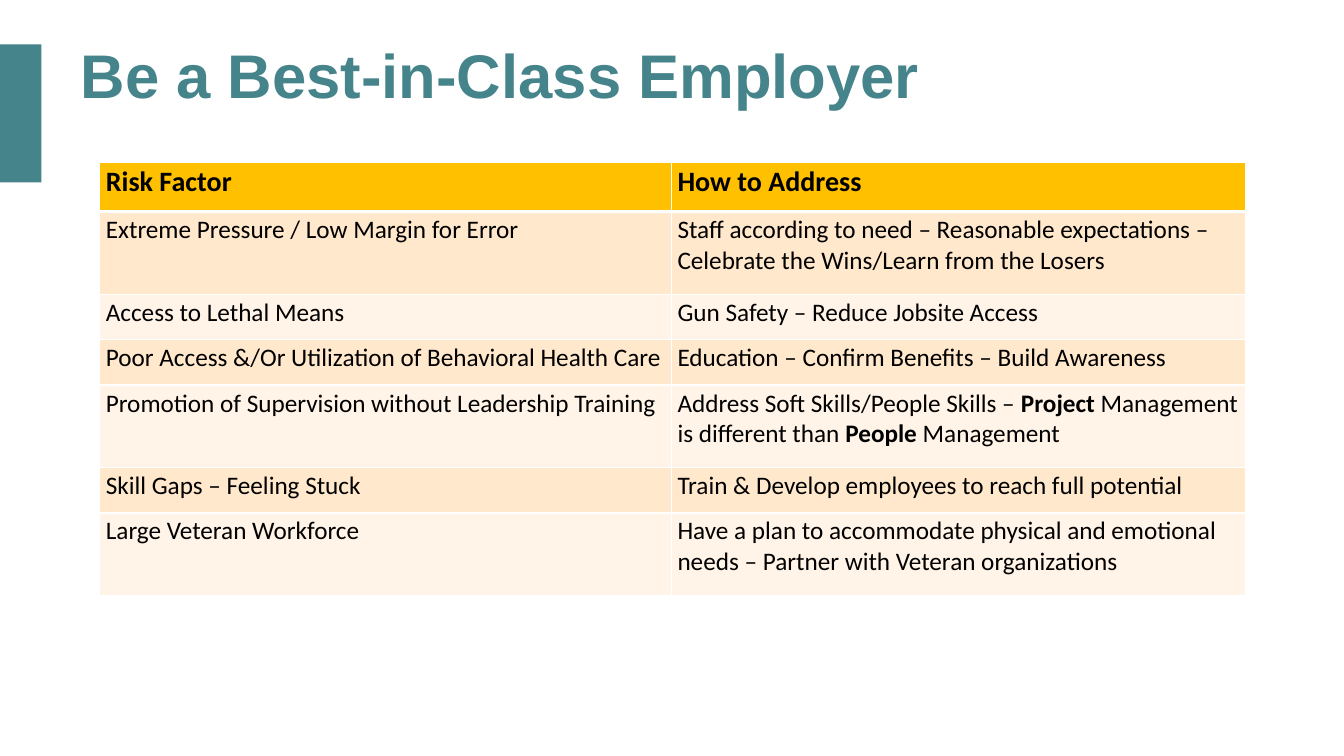
"""Build the slide on risk factors and how a best-in-class employer addresses them."""
import lxml.etree
import pptx
import pptx.dml.color
import pptx.enum.shapes
import pptx.enum.text
import pptx.oxml.ns
import pptx.util

COLORS = {
    "teal": "45848A",
    "gold": "FFC000",
    "peach": "FFE8CC",
    "cream": "FFF4E7",
    "text": "000000",
    "border": "FFFFFF",
}
RISKS = [
    ("Risk Factor", "How to Address"),
    ("Extreme Pressure / Low Margin for Error",
     "Staff according to need – Reasonable expectations – "
     "Celebrate the Wins/Learn from the Losers"),
    ("Access to Lethal Means", "Gun Safety – Reduce Jobsite Access"),
    ("Poor Access &/Or Utilization of Behavioral Health Care",
     "Education – Confirm Benefits – Build Awareness"),
    ("Promotion of Supervision without Leadership Training",
     "Address Soft Skills/People Skills – *Project* Management is different "
     "than *People* Management"),
    ("Skill Gaps – Feeling Stuck", "Train & Develop employees to reach full potential"),
    ("Large Veteran Workforce",
     "Have a plan to accommodate physical and emotional needs – "
     "Partner with Veteran organizations"),
]
HEADER_HEIGHT, ONE_LINE, TWO_LINES = 0.49, 0.45, 0.82
ROW_HEIGHTS = [HEADER_HEIGHT, TWO_LINES, ONE_LINE, ONE_LINE, TWO_LINES, ONE_LINE, TWO_LINES]
COLUMN_WIDTHS = [5.67, 5.69]
inches = pptx.util.Inches


def rgb(name):
    return pptx.dml.color.RGBColor.from_string(COLORS[name])


def add_border(cell, side, points):
    qn = pptx.oxml.ns.qn
    line = lxml.etree.SubElement(cell._tc.get_or_add_tcPr(), qn(f"a:ln{side}"),
                                 w=str(pptx.util.Pt(points)))
    fill = lxml.etree.SubElement(line, qn("a:solidFill"))
    lxml.etree.SubElement(fill, qn("a:srgbClr"), val=COLORS["border"])


deck = pptx.Presentation()
deck.slide_width, deck.slide_height = inches(13.33), inches(7.5)
slide = deck.slides.add_slide(deck.slide_layouts[5])

accent = slide.shapes.add_shape(pptx.enum.shapes.MSO_SHAPE.RECTANGLE,
                                0, inches(0.44), inches(0.41), inches(1.37))
accent.shadow.inherit = False
accent.fill.solid()
accent.fill.fore_color.rgb = rgb("teal")
accent.line.fill.background()

headline = slide.shapes.title
headline.left, headline.top = inches(0.7), inches(0.19)
headline.width, headline.height = inches(10.81), inches(1.17)
headline.text_frame.text = "Be a Best-in-Class Employer"
headline.text_frame.vertical_anchor = pptx.enum.text.MSO_ANCHOR.MIDDLE
headline_line = headline.text_frame.paragraphs[0]
headline_line.alignment = pptx.enum.text.PP_ALIGN.LEFT
headline_line.line_spacing = 0.9
headline_font = headline_line.runs[0].font
headline_font.name, headline_font.size, headline_font.bold = "Arial", pptx.util.Pt(44), True
headline_font.color.rgb = rgb("teal")

risk_table = slide.shapes.add_table(
    len(RISKS), len(COLUMN_WIDTHS), inches(0.99), inches(1.61),
    inches(sum(COLUMN_WIDTHS)), inches(sum(ROW_HEIGHTS))).table
for column, width in zip(risk_table.columns, COLUMN_WIDTHS):
    column.width = inches(width)

for row_index, (entries, height) in enumerate(zip(RISKS, ROW_HEIGHTS)):
    is_header = row_index == 0
    risk_table.rows[row_index].height = inches(height)
    band = "gold" if is_header else ("cream", "peach")[row_index % 2]
    for column_index, entry in enumerate(entries):
        cell = risk_table.cell(row_index, column_index)
        for side in "LRTB":
            below_header = (row_index, side) in ((0, "B"), (1, "T"))
            add_border(cell, side, 3 if below_header else 1)
        cell.fill.solid()
        cell.fill.fore_color.rgb = rgb(band)
        cell.margin_left = cell.margin_right = inches(0.06)
        cell.margin_top = cell.margin_bottom = inches(0.03)
        for part_index, part in enumerate(entry.split("*")):
            run = cell.text_frame.paragraphs[0].add_run()
            run.text = part
            run.font.name = "Calibri"
            run.font.size = pptx.util.Pt(20 if is_header else 18)
            run.font.bold = is_header or part_index % 2 == 1
            run.font.color.rgb = rgb("text")

deck.save("out.pptx")
